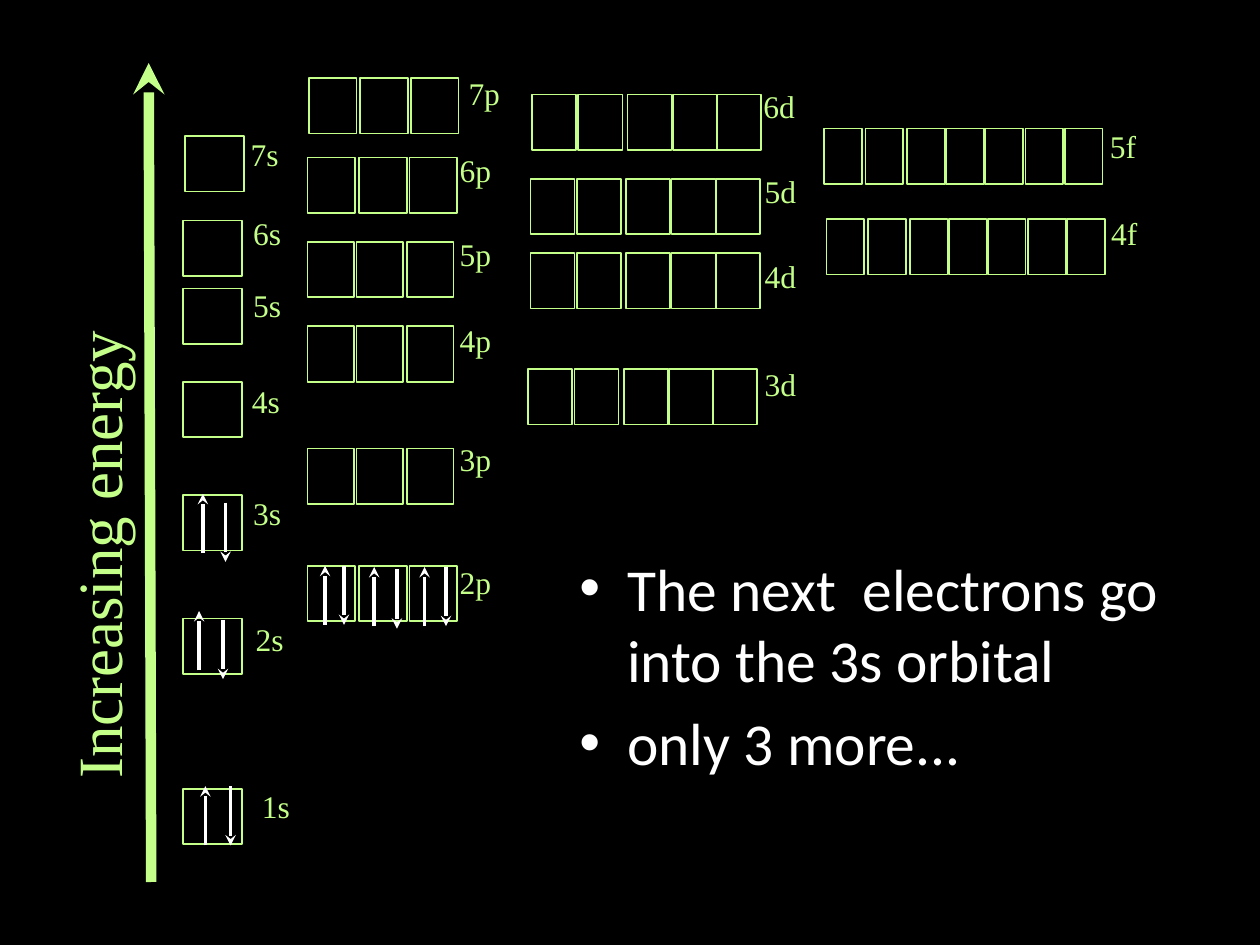
import pptx
import pptx.util
import pptx.dml.color
import pptx.enum.shapes
import pptx.oxml.ns
from lxml import etree

PX = 9144  # 100 px to the inch
GREEN = pptx.dml.color.RGBColor(0xC4, 0xFF, 0x89)
WHITE = pptx.dml.color.RGBColor(0xFF, 0xFF, 0xFF)
BLACK = pptx.dml.color.RGBColor(0x00, 0x00, 0x00)

deck = pptx.Presentation()
deck.slide_width = 1000 * PX
deck.slide_height = 750 * PX
slide = deck.slides.add_slide(deck.slide_layouts[6])
slide.background.fill.solid()
slide.background.fill.fore_color.rgb = BLACK


def add_text(lines, left, top, width, height, font_name, size, color):
    box = slide.shapes.add_textbox(left * PX, top * PX, width * PX, height * PX)
    box.text_frame.word_wrap = True
    box.text_frame.text = "\n".join(lines)
    for paragraph in box.text_frame.paragraphs:
        for run in paragraph.runs:
            run.font.name = font_name
            run.font.size = pptx.util.Pt(size)
            run.font.color.rgb = color
    return box


def add_arrow(tail_x, tail_y, tip_x, tip_y, color, weight):
    arrow = slide.shapes.add_connector(
        pptx.enum.shapes.MSO_CONNECTOR.STRAIGHT,
        tail_x * PX, tail_y * PX, tip_x * PX, tip_y * PX)
    arrow.line.color.rgb = color
    arrow.line.width = pptx.util.Pt(weight)
    line_xml = arrow.line._get_or_add_ln()
    etree.SubElement(line_xml, pptx.oxml.ns.qn("a:tailEnd"), type="stealth")
    etree.SubElement(arrow._element.spPr, pptx.oxml.ns.qn("a:effectLst"))


# Explanation
explanation = add_text(["The next  electrons go into the 3s orbital", "only 3 more..."],
                       450, 433, 493, 262, "Calibri", 34, WHITE)
for index, point in enumerate(explanation.text_frame.paragraphs):
    properties = point._p.get_or_add_pPr()
    properties.set("marL", str(38 * PX))
    properties.set("indent", str(-38 * PX))
    etree.SubElement(properties, pptx.oxml.ns.qn("a:buFont"), typeface="Arial")
    etree.SubElement(properties, pptx.oxml.ns.qn("a:buChar"), char="•")
    point.space_before = pptx.util.Pt(6.8 if index else 0)

# Energy axis
add_arrow(120, 700, 118, 50, GREEN, 6)
axis_title = add_text(["Increasing energy"], -155, 361, 464, 70,
                      "Times New Roman", 36, GREEN)
axis_title.rotation = 270

# Subshells: name, first box left and top, box width, box offsets, label left and top
S = (0,)
P_NARROW = (0, 39, 79)
P_WIDE = (0, 41, 81)
D = (0, 37, 76, 112, 147)
F = (0, 33, 66, 97, 128, 160, 191)
BOX_HEIGHT = 44
subshells = [
    ("1s", 145, 626, 47, S, 198, 620),
    ("2s", 145, 491, 47, S, 193, 487),
    ("3s", 145, 393, 47, S, 191, 387),
    ("4s", 145, 303, 47, S, 190, 298),
    ("5s", 145, 229, 47, S, 191, 222),
    ("6s", 145, 175, 47, S, 191, 165),
    ("7s", 147, 108, 47, S, 189, 102),
    ("2p", 244, 449, 38, P_WIDE, 355, 442),
    ("3p", 244, 356, 37, P_NARROW, 355, 344),
    ("4p", 244, 259, 37, P_NARROW, 355, 250),
    ("5p", 244, 192, 37, P_NARROW, 355, 182),
    ("6p", 244, 125, 38, P_WIDE, 355, 115),
    ("7p", 245, 62, 38, P_WIDE, 362, 54),
    ("3d", 419, 293, 35, D, 597, 285),
    ("4d", 421, 201, 35, D, 597, 199),
    ("5d", 421, 142, 35, D, 597, 132),
    ("6d", 422, 75, 35, D, 596, 64),
    ("4f", 656, 174, 30, F, 872, 165),
    ("5f", 654, 102, 30, F, 871, 96),
]
for name, left, top, width, offsets, label_left, label_top in subshells:
    for offset in offsets:
        orbital = slide.shapes.add_shape(
            pptx.enum.shapes.MSO_SHAPE.RECTANGLE,
            (left + offset) * PX, top * PX, width * PX, BOX_HEIGHT * PX)
        orbital.shadow.inherit = False
        orbital.fill.background()
        orbital.line.color.rgb = GREEN
        orbital.line.width = pptx.util.Pt(1)
    label_width = 88 if name.endswith("s") else 68
    add_text([name], label_left, label_top, label_width, 63,
             "Times New Roman", 18, GREEN)

# Electron pairs: spin-up x and top, spin-down x and top
SPIN_LENGTH = 47
electron_pairs = [
    (163, 624, 183, 624),
    (158, 485, 177, 492),
    (161, 392, 179, 399),
    (258, 449, 273, 449),
    (297, 450, 315, 452),
    (337, 450, 354, 450),
]
for up_x, up_top, down_x, down_top in electron_pairs:
    add_arrow(up_x, up_top + SPIN_LENGTH, up_x, up_top, WHITE, 2)
    add_arrow(down_x, down_top, down_x, down_top + SPIN_LENGTH, WHITE, 2)

deck.save("out.pptx")
